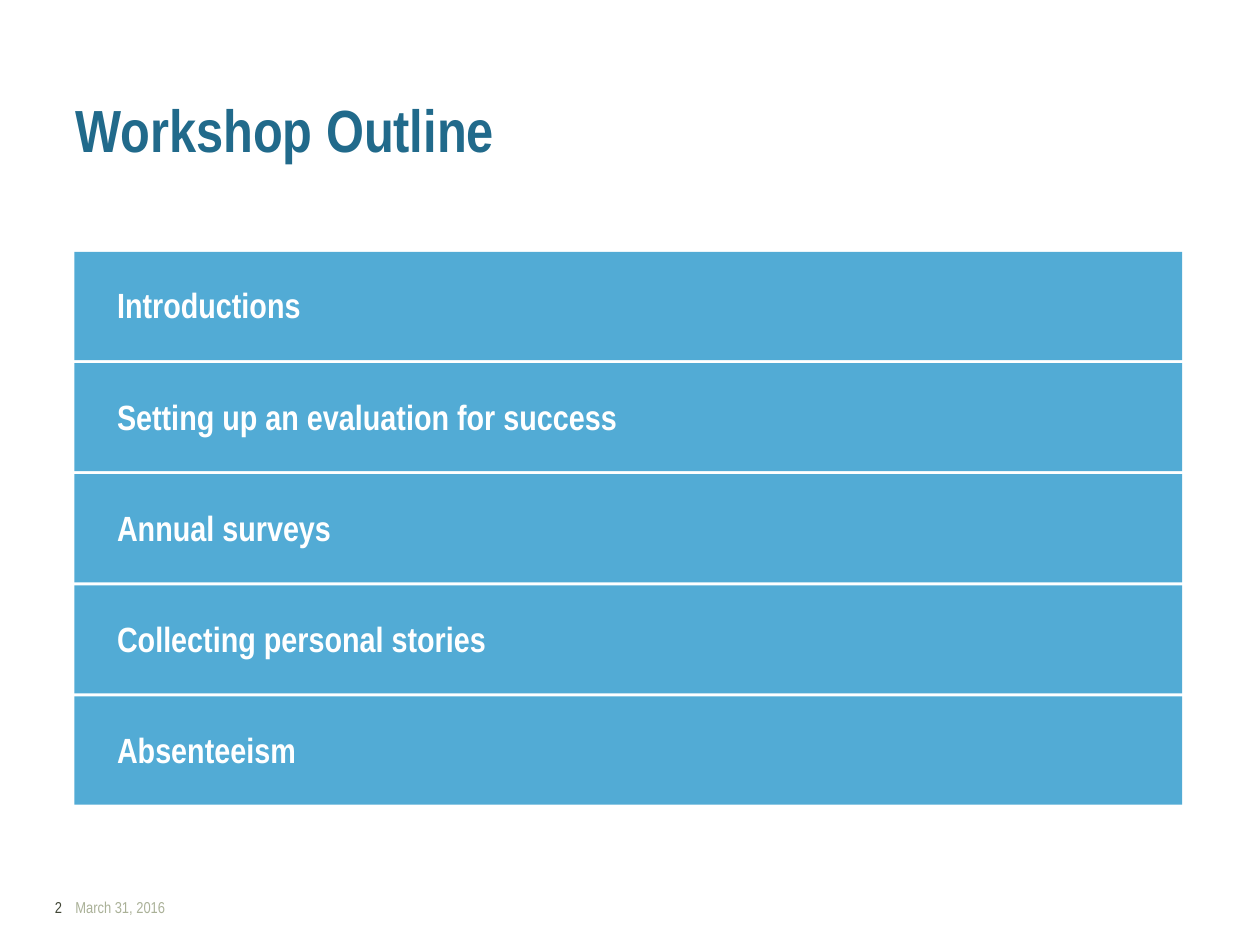
"""Build the workshop outline slide with its five topic bars."""
from dataclasses import dataclass

from pptx import Presentation
from pptx.dml.color import RGBColor as Rgb
from pptx.enum.shapes import MSO_SHAPE as Shape
from pptx.enum.text import MSO_ANCHOR as Anchor
from pptx.enum.text import MSO_AUTO_SIZE as Fit
from pptx.enum.text import PP_ALIGN as Align
from pptx.slide import Slide
from pptx.util import Cm, Pt

HUES = {
    "page": "FFFFFF",
    "bar": "52ABD5",
    "topic": "FFFFFF",
    "title": "216A8B",
    "number": "414636",
    "date": "AAB198",
}
TOPICS = (
    "Introductions",
    "Setting up an evaluation for success",
    "Annual surveys",
    "Collecting personal stories",
    "Absenteeism",
)
TOP, PITCH = 5.08, 2.24


@dataclass(frozen=True)
class Box:
    left: float
    top: float
    width: float
    height: float

    def place(self) -> tuple:
        """Give the four lengths for a new shape."""
        return Cm(self.left), Cm(self.top), Cm(self.width), Cm(self.height)


@dataclass(frozen=True)
class Label:
    text: str
    box: Box
    hue: str
    size: int
    bold: bool = False
    align: Align = Align.LEFT
    anchor: Anchor = Anchor.TOP
    pitch: float = 1.0


def apply(item: object, values: dict) -> None:
    """Set each named value on the item."""
    for name, value in values.items():
        setattr(item, name, value)


def draw_label(slide: Slide, label: Label) -> None:
    """Draw one line of text in a text box."""
    frame = slide.shapes.add_textbox(*label.box.place()).text_frame
    apply(frame, {
        "word_wrap": True,
        "auto_size": Fit.SHAPE_TO_FIT_TEXT,
        "vertical_anchor": label.anchor,
    })
    para = frame.paragraphs[0]
    apply(para, {"alignment": label.align, "line_spacing": label.pitch})
    run = para.add_run()
    run.text = label.text
    apply(run.font, {
        "name": "Arial Narrow",
        "size": Pt(label.size),
        "bold": label.bold,
    })
    run.font.color.rgb = Rgb.from_string(HUES[label.hue])


def draw_bar(slide: Slide, box: Box) -> None:
    """Draw a plain filled bar."""
    bar = slide.shapes.add_shape(Shape.RECTANGLE, *box.place())
    bar.shadow.inherit = False
    bar.fill.solid()
    bar.fill.fore_color.rgb = Rgb.from_string(HUES["bar"])
    bar.line.fill.background()


def draw_topic(slide: Slide, text: str, top: float) -> None:
    """Draw a topic on its bar."""
    draw_bar(slide, Box(1.5, top, 22.33, 2.18))
    box = Box(2.11, top + 0.52, 19.48, 1.1)
    draw_label(slide, Label(text, box, "topic", 20, bold=True))


def main() -> None:
    """Build and save the slide."""
    deck = Presentation()
    apply(deck, {"slide_width": Cm(25.4), "slide_height": Cm(19.05)})
    slide = deck.slides.add_slide(deck.slide_layouts[6])
    slide.background.fill.solid()
    slide.background.fill.fore_color.rgb = Rgb.from_string(HUES["page"])

    labels = (
        Label("2", Box(0.2, 17.98, 1.3, 0.64), "number", 9, align=Align.RIGHT),
        Label("March 31, 2016", Box(1.27, 17.98, 3.56, 0.64), "date", 9),
        Label("Workshop Outline", Box(1.27, 1.88, 22.86, 1.57), "title", 34,
              bold=True, anchor=Anchor.BOTTOM, pitch=0.9),
    )
    for label in labels:
        draw_label(slide, label)
    for row, text in enumerate(TOPICS):
        draw_topic(slide, text, TOP + row * PITCH)
    deck.save("out.pptx")


if __name__ == "__main__":
    main()
